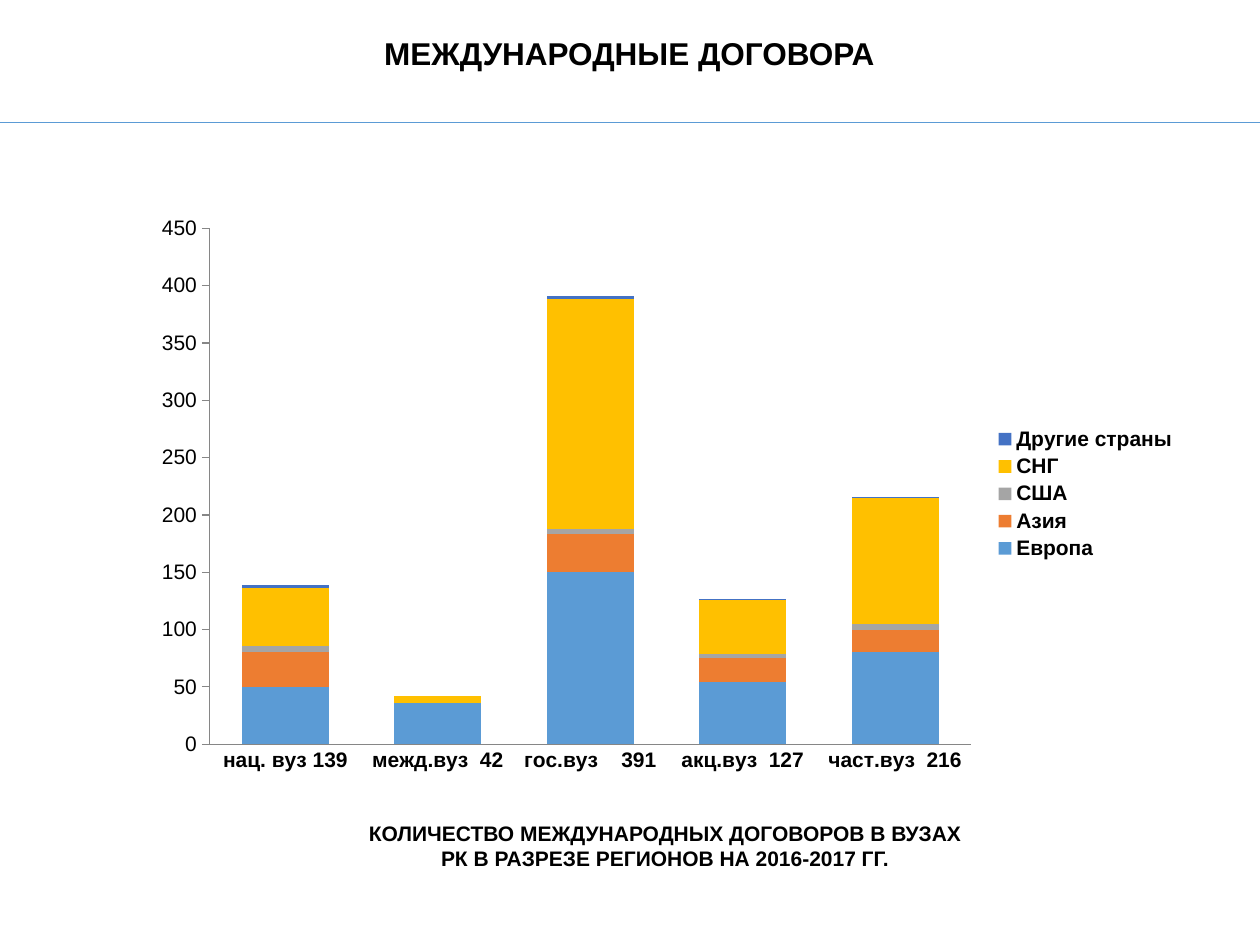
import pptx
import pptx.util
from lxml import etree
from pptx.chart.data import CategoryChartData
from pptx.dml.color import RGBColor
from pptx.enum.chart import XL_CHART_TYPE, XL_LEGEND_POSITION, XL_TICK_MARK
from pptx.enum.shapes import MSO_CONNECTOR, MSO_SHAPE
from pptx.enum.text import MSO_ANCHOR, PP_ALIGN
from pptx.oxml.ns import qn

WIDTH, HEIGHT = 10, 7.5
FONT = "Arial"
BLACK = RGBColor(0x00, 0x00, 0x00)
GREY = RGBColor(0xA5, 0xA5, 0xA5)
AXIS_GREY = RGBColor(0x86, 0x86, 0x86)
LIGHT_BLUE = RGBColor(0x5B, 0x9B, 0xD5)
ORANGE = RGBColor(0xED, 0x7D, 0x31)
GOLD = RGBColor(0xFF, 0xC0, 0x00)
BLUE = RGBColor(0x44, 0x72, 0xC4)

UNIVERSITIES = ["нац. вуз 139", "межд.вуз  42", "гос.вуз    391",
                "акц.вуз  127", "част.вуз  216"]
REGIONS = [
    ("Европа", [50, 36, 150, 54, 80], LIGHT_BLUE),
    ("Азия", [30, None, 33, 21, 20], ORANGE),
    ("США", [6, None, 5, 4, 5], GREY),
    ("СНГ", [50, 6, 200, 47, 110], GOLD),
    ("Другие страны", [3, None, 3, 1, 1], BLUE),
]
# Plot area as shares of the chart box
PLOT = {"x": 0.065, "y": 0.04, "w": 0.727, "h": 0.894}


def inches(box):
    return [pptx.util.Inches(length) for length in box]


def set_font(font, size, bold):
    font.name = FONT
    font.size = pptx.util.Pt(size)
    font.bold = bold
    font.color.rgb = BLACK


def write_text(shape, text, size):
    frame = shape.text_frame
    frame.word_wrap = True
    frame.vertical_anchor = MSO_ANCHOR.MIDDLE
    line = frame.paragraphs[0]
    line.text = text
    line.alignment = PP_ALIGN.CENTER
    set_font(line.font, size, True)


def add_header(slide, box):
    """Title centred in the box, with a rule across its lower edge."""
    left, top, width, height = box
    title = slide.shapes.add_shape(
        MSO_SHAPE.ROUNDED_RECTANGLE,
        *inches((left + 0.077 * width, top + 0.196 * height,
                 0.845 * width, 0.464 * height)))
    title.shadow.inherit = False
    title.fill.background()
    title.line.fill.background()
    write_text(title, "МЕЖДУНАРОДНЫЕ ДОГОВОРА", 18)

    bottom = top + height
    rule = slide.shapes.add_connector(
        MSO_CONNECTOR.STRAIGHT, *inches((left, bottom, left + width, bottom)))
    rule.line.color.rgb = LIGHT_BLUE
    rule.line.width = pptx.util.Pt(0.5)
    etree.SubElement(rule._element.spPr, qn("a:effectLst"))


def place_plot(chart):
    """Fix the inner plot area inside the chart."""
    plot_area = chart._chartSpace.chart.plotArea
    layout = plot_area.find(qn("c:layout"))
    if layout is None:
        layout = etree.Element(qn("c:layout"))
        plot_area.insert(0, layout)
    manual = etree.SubElement(layout, qn("c:manualLayout"))
    settings = {"layoutTarget": "inner", "xMode": "edge", "yMode": "edge", **PLOT}
    for tag, value in settings.items():
        etree.SubElement(manual, qn("c:" + tag)).set("val", str(value))


def add_region_chart(slide, box):
    """Stacked columns: agreements by university type and region."""
    data = CategoryChartData()
    data.categories = UNIVERSITIES
    for region, counts, _ in REGIONS:
        data.add_series(region, counts)
    chart = slide.shapes.add_chart(
        XL_CHART_TYPE.COLUMN_STACKED, *inches(box), data).chart
    chart.has_title = False
    set_font(chart.font, 12, False)
    place_plot(chart)

    columns = chart.plots[0]
    columns.gap_width = 75
    columns.overlap = 100
    columns.vary_by_categories = False
    for series, (_, _, color) in zip(columns.series, REGIONS):
        series.format.fill.solid()
        series.format.fill.fore_color.rgb = color

    # Axes
    for axis, tick, bold in ((chart.category_axis, XL_TICK_MARK.NONE, True),
                             (chart.value_axis, XL_TICK_MARK.OUTSIDE, False)):
        axis.major_tick_mark = tick
        axis.minor_tick_mark = XL_TICK_MARK.NONE
        axis.has_major_gridlines = False
        axis.format.line.color.rgb = AXIS_GREY
        axis.format.line.width = pptx.util.Pt(0.75)
        set_font(axis.tick_labels.font, 12, bold)
    chart.value_axis.minimum_scale = 0
    chart.value_axis.maximum_scale = 450
    chart.value_axis.major_unit = 50

    # Legend
    chart.has_legend = True
    chart.legend.position = XL_LEGEND_POSITION.RIGHT
    chart.legend.include_in_layout = False
    set_font(chart.legend.font, 12, True)


def add_caption(slide, box):
    caption = slide.shapes.add_textbox(*inches(box))
    write_text(caption, "КОЛИЧЕСТВО МЕЖДУНАРОДНЫХ ДОГОВОРОВ В ВУЗАХ "
                        "РК В РАЗРЕЗЕ РЕГИОНОВ НА 2016-2017 ГГ.", 12)


def main():
    deck = pptx.Presentation()
    deck.slide_width, deck.slide_height = inches((WIDTH, HEIGHT))
    slide = deck.slides.add_slide(deck.slide_layouts[6])
    add_header(slide, (0, 0, WIDTH, 0.13 * HEIGHT))
    add_region_chart(slide, (1.12, 1.63, 8.32, 4.58))
    add_caption(slide, (2.78, 6.46, WIDTH / 2, 0.5))
    deck.save("out.pptx")


if __name__ == "__main__":
    main()
